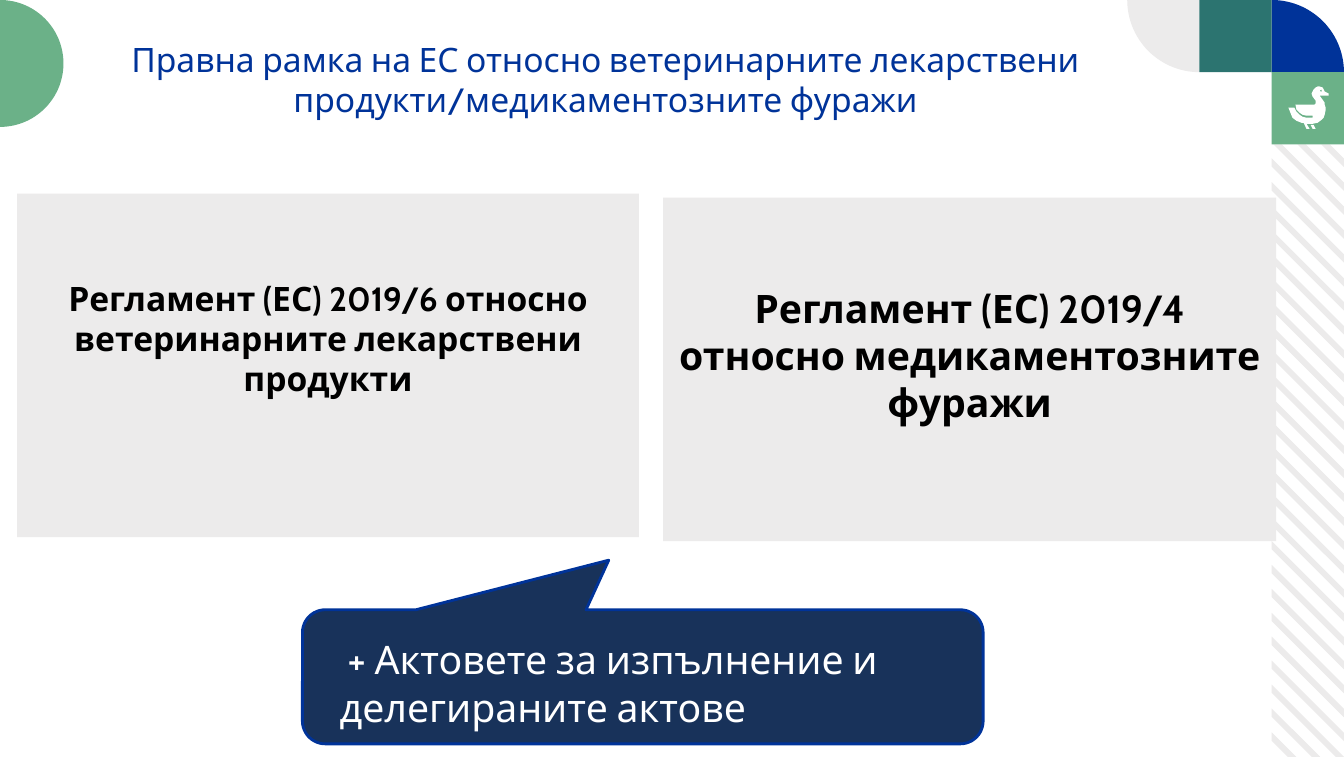
from math import cos, sin, radians
from pptx import Presentation
from pptx.dml.color import RGBColor
from pptx.enum.shapes import MSO_SHAPE
from pptx.enum.text import MSO_ANCHOR, PP_ALIGN
from pptx.util import Cm, Pt

GREY = RGBColor(0xEC, 0xEB, 0xEB)
TEAL = RGBColor(0x2C, 0x74, 0x70)
GREEN = RGBColor(0x6B, 0xB1, 0x88)
BLUE = RGBColor(0x00, 0x33, 0x99)
NAVY = RGBColor(0x18, 0x32, 0x5A)
WHITE = RGBColor(0xFF, 0xFF, 0xFF)
BLACK = RGBColor(0, 0, 0)

deck = Presentation()
deck.slide_width, deck.slide_height = Cm(33.86), Cm(19.08)
slide = deck.slides.add_slide(deck.slide_layouts[6])
shapes = slide.shapes


def draw(paths, color):
    paths = [[(x * 1000, y * 1000) for x, y in path] for path in paths]
    pen = shapes.build_freeform(*paths[0][0], scale=Cm(0.001))
    for i, path in enumerate(paths):
        if i:
            pen.move_to(*path[0])
        pen.add_line_segments(path[1:], close=True)
    form = pen.convert_to_shape()
    form.shadow.inherit = False
    form.fill.solid()
    form.fill.fore_color.rgb = color
    form.line.fill.background()


def write(frame, text, size, color, align, bold=False):
    frame.word_wrap = True
    para = frame.paragraphs[0]
    para.text = text
    para.alignment = align
    para.font.name = "Cabin"
    para.font.size = Pt(size)
    para.font.bold = bold
    para.font.color.rgb = color


tile = 1.82
right, base = 33.86, 19.08
edge, top = right - tile, 2 * tile

stripes = []
for i in range(28):
    start = 2.18 + 0.603 * i
    band = []
    for y in (start, start + 0.21):
        high, low = max(y, top), min(y + tile, base)
        band.append([(edge + high - y, high), (edge + low - y, low)])
    stripes.append(band[0] + band[1][::-1])
draw(stripes, GREY)

wedges = [
    (edge, tile, tile, -90, 0, BLUE),
    (edge - tile, 0, tile, 90, 180, GREY),
    (0, 1.6, 1.6, -90, 90, GREEN),
]
for x, y, r, first, last, color in wedges:
    arc = [(x + r * cos(radians(a)), y + r * sin(radians(a)))
           for a in range(first, last + 1, 3)]
    draw([[(x, y)] + arc], color)

blocks = [
    (edge - tile, 0, tile, tile, TEAL, "", 0, 0),
    (edge, tile, tile, tile, GREEN, "", 0, 0),
    (0.43, 4.88, 15.67, 8.66, GREY,
     "Регламент (ЕС) 2019/6 относно ветеринарните лекарствени продукти", 24, 1.5),
    (16.71, 4.98, 15.44, 8.66, GREY,
     "Регламент (ЕС) 2019/4 относно медикаментозните фуражи", 28, 0.84),
]
for x, y, wide, high, color, text, size, pad in blocks:
    block = shapes.add_shape(MSO_SHAPE.RECTANGLE, Cm(x), Cm(y), Cm(wide), Cm(high))
    block.shadow.inherit = False
    block.fill.solid()
    block.fill.fore_color.rgb = color
    block.line.fill.background()
    if text:
        frame = block.text_frame
        frame.vertical_anchor = MSO_ANCHOR.MIDDLE
        frame.margin_bottom = Cm(pad)
        write(frame, text, size, BLACK, PP_ALIGN.CENTER, True)

feet = [(27, 42), (25, 38), (22, 38), (24, 42)]
bird = [
    (40, 7), (36, 5), (35, 3), (34, 1), (31, 0), (29, 0), (27, 1), (25, 3),
    (24, 5), (23, 7), (24, 10), (27, 14), (27, 17), (26, 18), (25, 18), (7, 18),
    (8, 23), (11, 26), (14, 28), (18, 29), (24, 29), (24, 31), (18, 31), (14, 30),
    (11, 28), (8, 25), (6, 21), (0, 21), (2, 26), (4, 31), (8, 34), (13, 36),
    (15, 36), (18, 42), (21, 42), (18, 37), (24, 37), (29, 36), (33, 33), (35, 31),
    (36, 28), (37, 23), (37, 21), (36, 18), (36, 16), (31, 9), (40, 9),
]
eye = [(31, 4), (33, 3), (33, 5), (32, 5)]
draw([[(32.46 + x * 0.0254, 2.18 + y * 0.0254) for x, y in path]
      for path in (feet, bird, eye)], WHITE)

title = shapes.add_textbox(Cm(2.11), Cm(0.86), Cm(26.29), Cm(1.32))
write(title.text_frame,
      "Правна рамка на ЕС относно ветеринарните лекарствени продукти/медикаментозните фуражи",
      24, BLUE, PP_ALIGN.CENTER)

bubble = shapes.add_shape(MSO_SHAPE.ROUNDED_RECTANGULAR_CALLOUT,
                          Cm(7.62), Cm(15.37), Cm(17.15), Cm(3.38))
for i, value in enumerate((-0.05, -0.87, 0.17)):
    bubble.adjustments[i] = value
bubble.shadow.inherit = False
bubble.fill.solid()
bubble.fill.fore_color.rgb = NAVY
bubble.line.color.rgb = BLUE
bubble.line.width = Pt(2)

note = shapes.add_textbox(Cm(8.31), Cm(15.9), Cm(15.54), Cm(1.45))
write(note.text_frame, "+ Актовете за изпълнение и делегираните актове",
      28, WHITE, PP_ALIGN.LEFT)
note.text_frame.paragraphs[0]._p.get_or_add_pPr().set("indent", str(Cm(0.2)))

deck.save("out.pptx")
